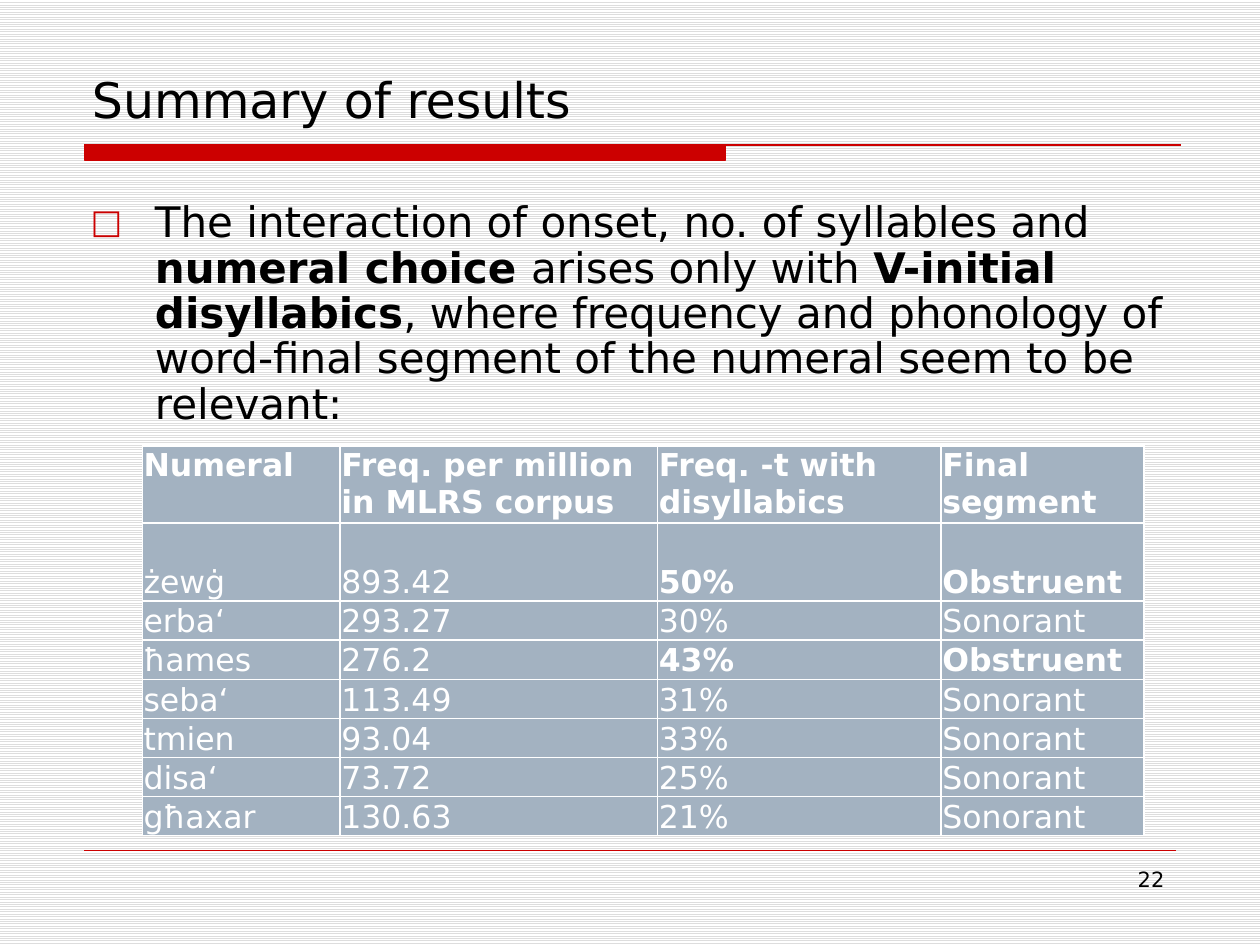
from lxml.etree import SubElement as Sub
from pptx import Presentation
from pptx.dml.color import RGBColor
from pptx.enum.dml import MSO_PATTERN
from pptx.enum.shapes import MSO_CONNECTOR
from pptx.enum.text import MSO_ANCHOR, MSO_AUTO_SIZE, PP_ALIGN
from pptx.oxml.ns import qn
from pptx.util import Inches, Pt

BLACK = RGBColor(0, 0, 0)
WHITE = RGBColor(255, 255, 255)
GREY = RGBColor(0xDD, 0xDD, 0xDD)
RED = RGBColor(0xCC, 0, 0)
BLUE = RGBColor(0xA3, 0xB2, 0xC1)
FACE = "DejaVu Sans"

CLAIM = [
    ("The interaction of onset, no. of syllables and ", False),
    ("numeral choice ", True),
    ("arises only with ", False),
    ("V-initial disyllabics", True),
    (", where frequency and phonology of word-final segment of the numeral seem to be relevant:", False),
]
HEAD = ["Numeral", "Freq. per million in MLRS corpus", "Freq. -t with disyllabics", "Final segment"]
DATA = [
    ["żewġ", "893.42", "50%", "Obstruent"],
    ["erba‘", "293.27", "30%", "Sonorant"],
    ["ħames", "276.2", "43%", "Obstruent"],
    ["seba‘", "113.49", "31%", "Sonorant"],
    ["tmien", "93.04", "33%", "Sonorant"],
    ["disa‘", "73.72", "25%", "Sonorant"],
    ["għaxar", "130.63", "21%", "Sonorant"],
]
WIDTHS = [1.57, 2.52, 2.25, 1.61]
HEAD_H, ROW_H = 0.59, 0.3


def place(shape, x, y, w, h):
    shape.left, shape.top = Inches(x), Inches(y)
    shape.width, shape.height = Inches(w), Inches(h)


def style(para, size, color=BLACK, bold=None):
    font = para.font
    font.name, font.size, font.bold = FACE, Pt(size), bold
    font.color.rgb = color


def add_back(slide):
    fill = slide.background.fill
    fill.patterned()
    fill.pattern = MSO_PATTERN.LIGHT_HORIZONTAL
    fill.fore_color.rgb = GREY
    fill.back_color.rgb = WHITE


def add_bar(slide):
    left, top, mid, base, right = map(Inches, (0.67, 1.15, 5.76, 1.27, 9.37))
    pen = slide.shapes.build_freeform(left, top)
    pen.add_line_segments([(mid, top), (mid, base), (left, base)], close=True)
    pen.move_to(left, top)
    pen.add_line_segments([(right, top)], close=False)
    bar = pen.convert_to_shape()
    bar.shadow.inherit = False
    bar.fill.solid()
    bar.fill.fore_color.rgb = RED
    bar.line.color.rgb = RED
    bar.line.width = Pt(0.75)


def add_rule(slide):
    y = Inches(6.75)
    rule = slide.shapes.add_connector(MSO_CONNECTOR.STRAIGHT, Inches(0.67), y, Inches(9.33), y)
    rule.line.color.rgb = RED
    rule.line.width = Pt(0.25)
    Sub(rule._element.spPr, qn("a:effectLst"))


def add_number(slide):
    box = slide.shapes.add_textbox(0, 0, 0, 0)
    place(box, 7.17, 6.83, 2.17, 0.52)
    box.text_frame.word_wrap = True
    para = box.text_frame.paragraphs[0]
    para.text = "22"
    para.alignment = PP_ALIGN.RIGHT
    style(para, 12)


def set_title(slide):
    title = slide.shapes.title
    place(title, 0.63, 0.33, 8.75, 0.74)
    frame = title.text_frame
    frame.auto_size = MSO_AUTO_SIZE.NONE
    frame.vertical_anchor = MSO_ANCHOR.BOTTOM
    para = frame.paragraphs[0]
    para.text = "Summary of results"
    para.alignment = PP_ALIGN.LEFT
    style(para, 28)


def add_bullet(para):
    props = para._p.get_or_add_pPr()
    props.set("marL", str(Inches(0.51)))
    props.set("indent", str(-Inches(0.51)))
    Sub(Sub(props, qn("a:buClr")), qn("a:srgbClr"), val=str(RED))
    Sub(props, qn("a:buSzPct"), val="80000")
    Sub(props, qn("a:buFont"), typeface=FACE)
    Sub(props, qn("a:buChar"), char="□")


def set_body(slide):
    body = slide.placeholders[1]
    place(body, 0.62, 1.55, 8.75, 0.87)
    frame = body.text_frame
    frame.auto_size = MSO_AUTO_SIZE.NONE
    para = frame.paragraphs[0]
    para.line_spacing = 0.9
    para.space_before, para.space_after = Pt(4.8), Pt(6)
    add_bullet(para)
    style(para, 24)
    for text, bold in CLAIM:
        run = para.add_run()
        run.text = text
        run.font.bold = bold


def set_edges(cell, bare):
    props = cell._tc.get_or_add_tcPr()
    for side in "LRTB":
        edge = Sub(props, qn(f"a:ln{side}"), w=str(Pt(1)))
        if side == bare:
            Sub(edge, qn("a:noFill"))
        else:
            Sub(Sub(edge, qn("a:solidFill")), qn("a:srgbClr"), val=str(WHITE))


def fill_cell(cell, text, bold, anchor, bare):
    set_edges(cell, bare)
    cell.fill.solid()
    cell.fill.fore_color.rgb = BLUE
    cell.margin_left = cell.margin_right = cell.margin_top = Inches(0.01)
    cell.margin_bottom = 0
    cell.vertical_anchor = anchor
    para = cell.text_frame.paragraphs[0]
    if text:
        para.text = text
    style(para, 18, WHITE, bold)


def add_grid(slide):
    rows = [HEAD, [""] * len(HEAD), *DATA]
    high = HEAD_H + ROW_H * (len(rows) - 1)
    grid = slide.shapes.add_table(
        len(rows), len(HEAD), Inches(1.13), Inches(3.54), Inches(sum(WIDTHS)), Inches(high)
    ).table
    grid.first_row = grid.horz_banding = False
    for col, width in zip(grid.columns, WIDTHS):
        col.width = Inches(width)
    for r, row in enumerate(rows):
        grid.rows[r].height = Inches(ROW_H if r else HEAD_H)
        anchor = MSO_ANCHOR.BOTTOM if r > 1 else MSO_ANCHOR.TOP
        bare = {1: "B", 2: "T"}.get(r)
        for c, text in enumerate(row):
            bold = r == 0 or (c > 1 and row[3] == "Obstruent")
            fill_cell(grid.cell(r, c), text, bold, anchor, bare)


def main():
    deck = Presentation()
    deck.slide_width, deck.slide_height = Inches(10), Inches(7.5)
    slide = deck.slides.add_slide(deck.slide_layouts[1])
    add_back(slide)
    add_bar(slide)
    add_rule(slide)
    add_number(slide)
    set_title(slide)
    set_body(slide)
    add_grid(slide)
    deck.save("out.pptx")


if __name__ == "__main__":
    main()
